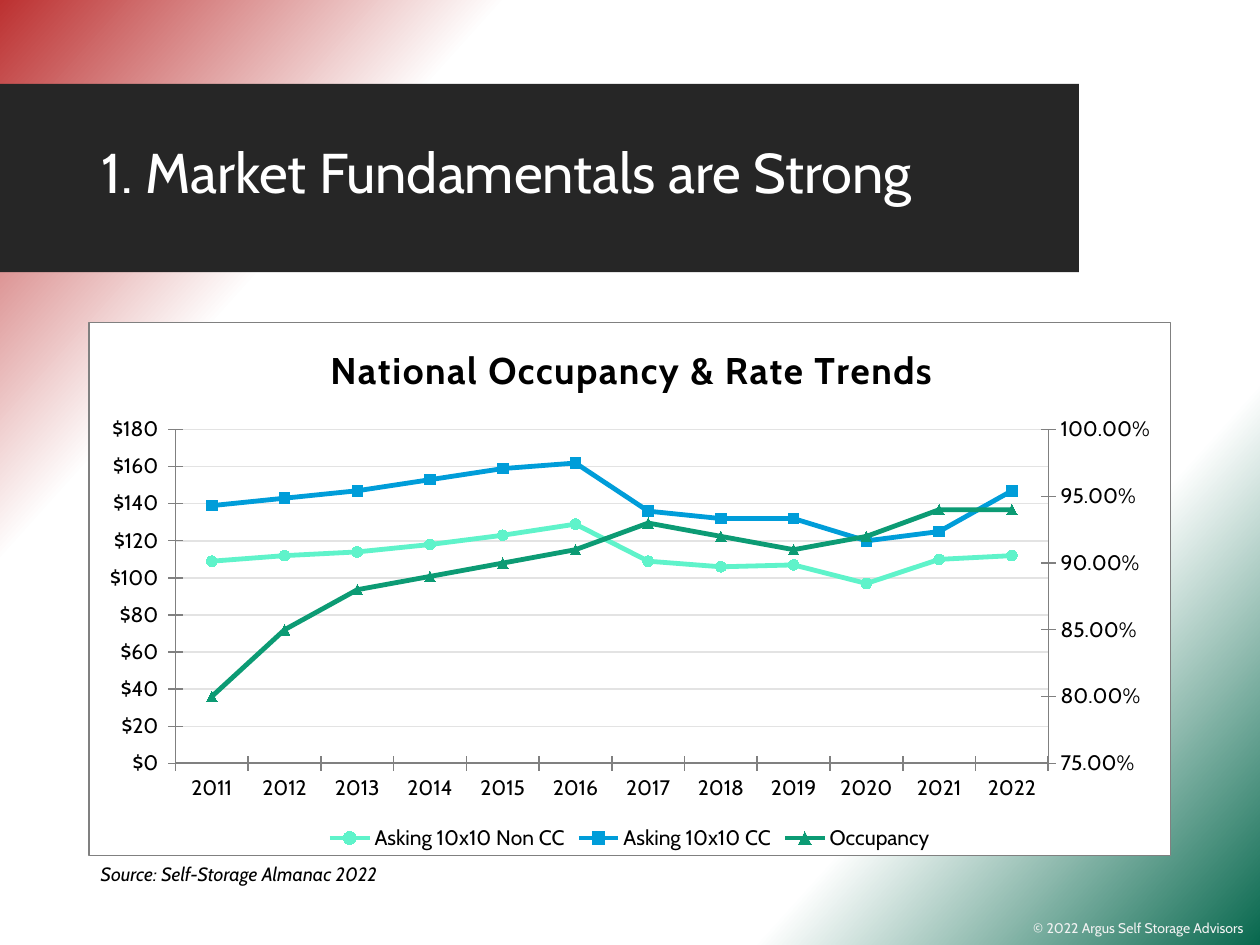
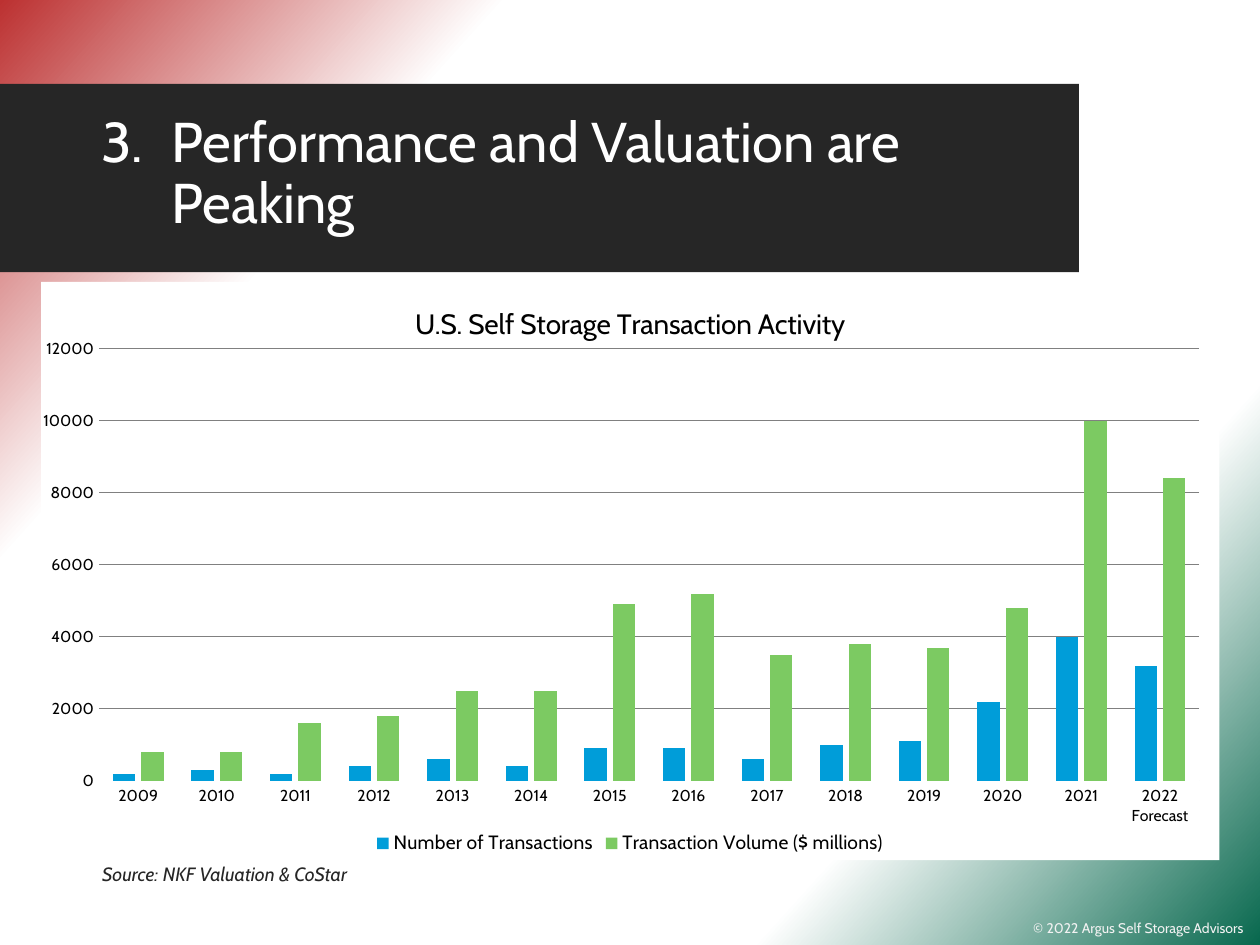
from copy import deepcopy
from lxml.etree import SubElement as Sub, fromstring
from pptx import Presentation
from pptx.chart.axis import CategoryAxis, ValueAxis
from pptx.chart.data import CategoryChartData as Data
from pptx.dml.color import RGBColor
from pptx.enum.chart import (XL_CHART_TYPE as Kind, XL_LEGEND_POSITION as Spot,
                             XL_MARKER_STYLE as Mark, XL_TICK_MARK as Tick)
from pptx.enum.shapes import MSO_SHAPE as Form
from pptx.enum.text import MSO_ANCHOR as Anchor
from pptx.oxml.ns import nsdecls, qn
from pptx.util import Cm, Pt

FONT = "Cabin"
BLACK, WHITE, DARK, GREY, PALE = "000000", "FFFFFF", "262626", "808080", "E3E3E3"
MINT, BLUE, TEAL, GREEN = "5FF3CA", "009DD9", "0C9B74", "7CCA62"
STOPS = [(0, "BC3131"), (24, WHITE), (76, WHITE), (100, "08684E")]
ANGLE = 42
HEAD = (1.79, 2.03, 20.04, 3)


def tint(code):
    return RGBColor.from_string(code)


def style(font, size, color=BLACK, bold=False, italic=False):
    font.name, font.size = FONT, Pt(size)
    font.bold, font.italic = bold, italic
    font.color.rgb = tint(color)


def fill(part, color):
    part.fill.solid()
    part.fill.fore_color.rgb = tint(color)


def stroke(line, color, width=0.75):
    """Draw a line in the colour, or hide it when the colour is None."""
    if color is None:
        line.fill.background()
    else:
        line.color.rgb = tint(color)
        line.width = Pt(width)


def place(part, index, **sides):
    """Give a chart part a fixed layout in percent of the chart."""
    old = part.find(qn("c:layout"))
    if old is not None:
        part.remove(old)
    layout = part.makeelement(qn("c:layout"))
    part.insert(index, layout)
    box = Sub(layout, qn("c:manualLayout"))
    if "w" in sides:
        Sub(box, qn("c:layoutTarget")).set("val", "inner")
    for side in "xy":
        Sub(box, qn(f"c:{side}Mode")).set("val", "edge")
    for side, size in sides.items():
        Sub(box, qn(f"c:{side}")).set("val", f"{size / 100:.3f}")


def panel(chart, border):
    """Fill the chart area with white and set its border."""
    line = (f'<a:solidFill><a:srgbClr val="{border}"/></a:solidFill>'
            if border else "<a:noFill/>")
    xml = (f'<c:spPr {nsdecls("c", "a")}><a:solidFill><a:srgbClr val="{WHITE}"/>'
           f'</a:solidFill><a:ln w="{Pt(0.75)}">{line}</a:ln></c:spPr>')
    chart.element.find(qn("c:chart")).addnext(fromstring(xml))


def split(chart):
    """Move the last series to a right-hand axis and return that axis."""
    area = chart.element.find(".//" + qn("c:plotArea"))
    plot = area.find(qn("c:lineChart"))
    twin = deepcopy(plot)
    series = plot.findall(qn("c:ser"))
    plot.remove(series[-1])
    for extra in twin.findall(qn("c:ser"))[:-1]:
        twin.remove(extra)
    plot.addnext(twin)
    cat, val = (deepcopy(area.find(qn(tag))) for tag in ("c:catAx", "c:valAx"))
    area.find(qn("c:valAx")).addnext(cat)
    cat.addnext(val)
    ids = ("7001", "7002")
    for node, code in zip(twin.findall(qn("c:axId")), ids):
        node.set("val", code)
    for axis, own, other in ((cat, *ids), (val, *ids[::-1])):
        axis.find(qn("c:axId")).set("val", own)
        axis.find(qn("c:crossAx")).set("val", other)
    val.find(qn("c:axPos")).set("val", "r")
    val.find(qn("c:crosses")).set("val", "max")
    CategoryAxis(cat).visible = False
    return ValueAxis(val)


class Deck:
    def __init__(self):
        self.prs = Presentation()
        self.prs.slide_width, self.prs.slide_height = Cm(25.4), Cm(19.05)
        self.slide = None

    def page(self):
        """Start a slide with the shared background, band and footer."""
        self.slide = self.prs.slides.add_slide(self.prs.slide_layouts[6])
        self.shade()
        self.band(0, 1.69, 21.75, 3.8)
        self.text("© 2022 Argus Self Storage Advisors",
                  (20.58, 18.42, 5.08, 0.61), size=8, color="F2F2F2")

    def shade(self):
        back = self.slide.background.fill
        back.gradient()
        back.gradient_angle = 360 - ANGLE
        stops = self.slide.element.find(".//" + qn("a:gsLst"))
        for old in list(stops):
            stops.remove(old)
        for spot, color in STOPS:
            stop = Sub(stops, qn("a:gs"))
            stop.set("pos", str(spot * 1000))
            Sub(stop, qn("a:srgbClr")).set("val", color)

    def band(self, *box):
        bar = self.slide.shapes.add_shape(Form.RECTANGLE, *map(Cm, box))
        bar.shadow.inherit = False
        fill(bar, DARK)
        stroke(bar.line, None)

    def text(self, words, box, anchor=Anchor.TOP, space=None, hang=0, **look):
        frame = self.slide.shapes.add_textbox(*map(Cm, box)).text_frame
        frame.word_wrap = True
        frame.vertical_anchor = anchor
        para = frame.paragraphs[0]
        para.text = words
        para.line_spacing = space
        if hang:
            props = para._p.get_or_add_pPr()
            props.set("marL", str(Cm(hang)))
            props.set("indent", str(-Cm(hang)))
        for run in para.runs:
            style(run.font, **look)

    def head(self, words, hang=0):
        self.text(words, HEAD, Anchor.MIDDLE, 0.9, hang, size=32, color=WHITE)

    def source(self, words, left, color):
        self.text(words, (left, 17.26, 8.89, 0.74), size=11, color=color,
                  italic=True)

    def chart(self, kind, box, cats, series, legend, border=None):
        data = Data()
        data.categories = cats
        for name, vals in series:
            data.add_series(name, vals)
        chart = self.slide.shapes.add_chart(kind, *map(Cm, box), data).chart
        style(chart.font, 10)
        panel(chart, border)
        chart.plots[0].vary_by_categories = False
        chart.has_legend = True
        chart.legend.position = Spot.BOTTOM
        chart.legend.include_in_layout = False
        style(chart.legend.font, legend)
        return chart

    def title(self, chart, words, size, x, y, bold=False, gap=0):
        chart.has_title = True
        title = chart.chart_title
        title.text_frame.text = words
        run = title.text_frame.paragraphs[0].runs[0]
        style(run.font, size, bold=bold)
        run._r.get_or_add_rPr().set("spc", str(gap))
        place(title._element, 1, x=x, y=y)

    def axes(self, chart, size, tick, lines, top, step, grid):
        """Style both axes; lines holds the category and value line colours."""
        for axis, color in zip((chart.category_axis, chart.value_axis), lines):
            axis.major_tick_mark, axis.minor_tick_mark = tick, Tick.NONE
            style(axis.tick_labels.font, size)
            stroke(axis.format.line, color)
        val = chart.value_axis
        val.minimum_scale, val.maximum_scale, val.major_unit = 0, top, step
        val.has_major_gridlines = True
        stroke(val.major_gridlines.format.line, grid)


def trends(deck):
    deck.page()
    series = [
        ("Asking 10x10 Non CC",
         (109, 112, 114, 118, 123, 129, 109, 106, 107, 97, 110, 112)),
        ("Asking 10x10 CC",
         (139, 143, 147, 153, 159, 162, 136, 132, 132, 120, 125, 147)),
        ("Occupancy", (0.8, 0.85, 0.88, 0.89, 0.9, 0.91,
                       0.93, 0.92, 0.91, 0.92, 0.94, 0.94)),
    ]
    years = [str(year) for year in range(2011, 2023)]
    chart = deck.chart(Kind.LINE_MARKERS, (1.78, 6.49, 21.83, 10.77), years,
                       series, legend=12, border=GREY)
    deck.title(chart, "National Occupancy & Rate Trends", 21.3, 21.7, 2.9,
               bold=True, gap=100)
    deck.axes(chart, 12, Tick.CROSS, (GREY, GREY), 180, 20, PALE)
    chart.category_axis.format.line.width = Pt(1)
    labels = chart.value_axis.tick_labels
    labels.number_format = '"$"#,##0_);[Red]\\("$"#,##0\\)'
    labels.number_format_is_linked = False
    looks = ((MINT, Mark.CIRCLE), (BLUE, Mark.SQUARE), (TEAL, Mark.TRIANGLE))
    for line, (color, mark) in zip(chart.series, looks):
        line.smooth = False
        stroke(line.format.line, color, 2.75)
        line.marker.style, line.marker.size = mark, 6
        fill(line.marker.format, color)
        stroke(line.marker.format.line, color)
    right = split(chart)
    right.has_major_gridlines = False
    right.minimum_scale, right.maximum_scale, right.major_unit = 0.75, 1, 0.05
    right.tick_labels.number_format = "0.00%"
    place(chart.element.find(".//" + qn("c:plotArea")), 0,
          x=8, y=20.1, w=80.7, h=62.6)
    deck.source("Source: Self-Storage Almanac 2022", 1.78, BLACK)
    deck.head("1. Market Fundamentals are Strong")


def deals(deck):
    deck.page()
    deck.source("Source: NKF Valuation & CoStar", 1.81, DARK)
    series = [
        ("Number of Transactions",
         (200, 300, 200, 400, 600, 400, 900, 900, 600, 1000, 1100, 2200,
          4000, 3200)),
        ("Transaction Volume ($ millions)",
         (800, 800, 1600, 1800, 2500, 2500, 4900, 5200, 3500, 3800, 3700,
          4800, 10000, 8400)),
    ]
    years = [str(year) for year in range(2009, 2022)] + ["2022 Forecast"]
    chart = deck.chart(Kind.COLUMN_CLUSTERED, (0.83, 5.68, 23.75, 11.66), years,
                       series, legend=11)
    deck.title(chart, "U.S. Self Storage Transaction Activity", 16, 31.3, 3.2)
    deck.axes(chart, 9, Tick.NONE, (WHITE, None), 12000, 2000, GREY)
    plot = chart.plots[0]
    plot.gap_width, plot.overlap = 125, -27
    for bars, color in zip(chart.series, (BLUE, GREEN)):
        fill(bars.format, color)
    place(chart.element.find(".//" + qn("c:plotArea")), 0,
          x=4.9, y=11.6, w=93.4, h=74.7)
    deck.head("3.\tPerformance and Valuation are\vPeaking", hang=1.42)


def main():
    deck = Deck()
    trends(deck)
    deals(deck)
    deck.prs.save("out.pptx")


if __name__ == "__main__":
    main()
